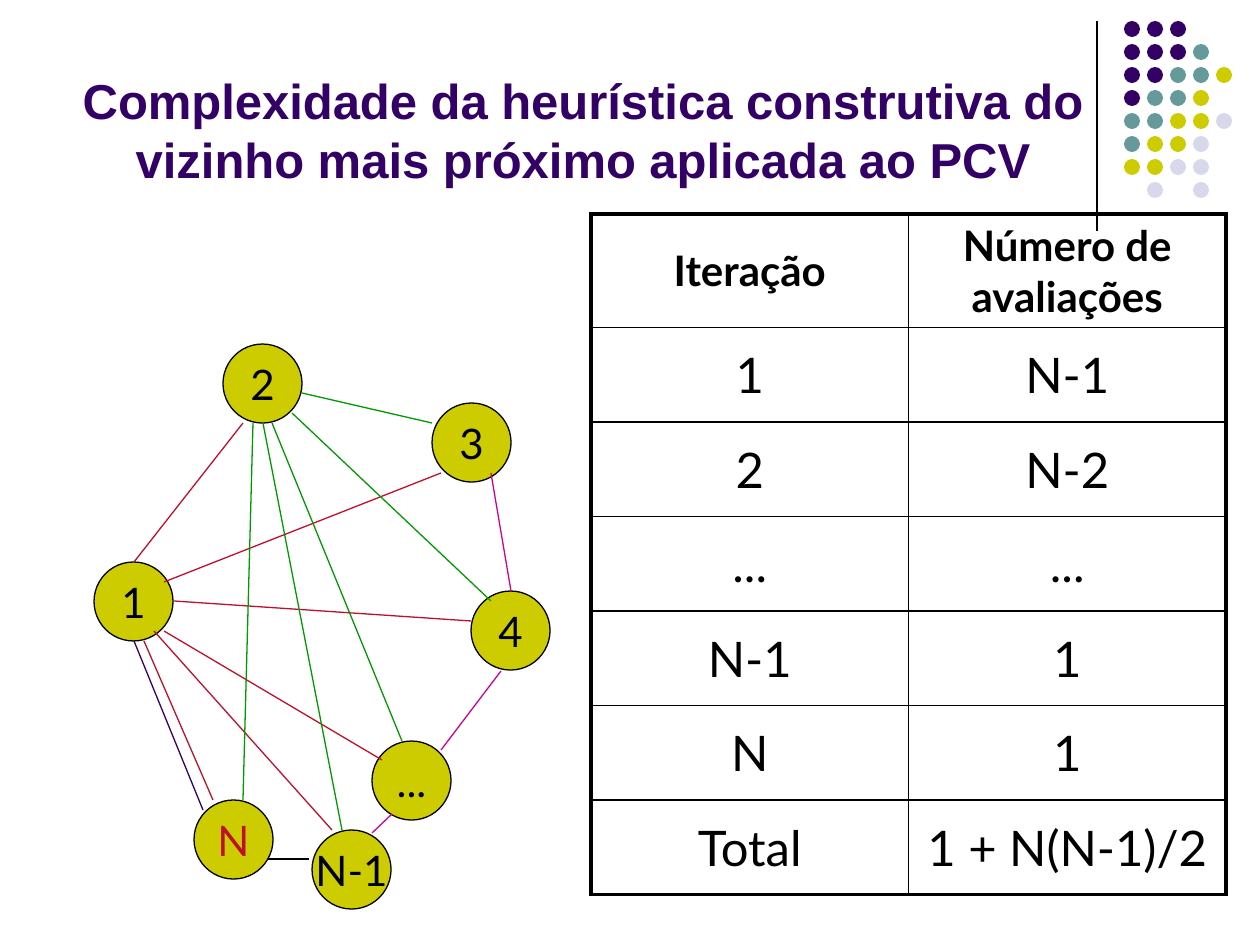
from lxml import etree
from pptx import Presentation
from pptx import util as u
from pptx.dml.color import RGBColor
from pptx.enum import shapes, text
from pptx.oxml.ns import qn

PX = 914400 / 126
BLACK, PURPLE, TEAL, LIME, PALE = "000000", "330066", "669999", "CCCC00", "D8D8EC"
RED, GREEN, PINK = "BC102D", "009900", "CC0099"

TITLE = "Complexidade da heurística construtiva do vizinho mais próximo aplicada ao PCV"

# Corner dots: one string per row, one letter per colour
DOTS = ["PPP", "PPPT", "PPTTL", "PTTL", "TTLLA", "TLLA", "LLAA", " A A"]
DOT_COLORS = {"P": PURPLE, "T": TEAL, "L": LIME, "A": PALE}
DOT_LEFT, DOT_TOP, DOT_PITCH, DOT_SIZE = 1124, 21, 23, 16

# Graph nodes: label, left, top, text colour
NODE_SIZE = 79
NODES = [
    ("1", 94, 562, BLACK), ("2", 223, 344, BLACK), ("3", 432, 403, BLACK),
    ("4", 471, 591, BLACK), ("...", 372, 741, BLACK), ("N", 194, 800, RED),
    ("N-1", 312, 830, BLACK),
]

# Graph edges by colour: x1, y1, x2, y2
EDGES = {
    RED: [(164, 582, 441, 473), (174, 601, 471, 621), (164, 631, 382, 760),
          (144, 641, 213, 800), (134, 562, 243, 423), (332, 830, 154, 631)],
    GREEN: [(302, 393, 432, 423), (292, 413, 491, 601), (272, 423, 402, 741),
            (253, 423, 243, 800), (342, 830, 263, 423)],
    PURPLE: [(203, 810, 134, 641)],
    PINK: [(491, 473, 511, 591), (501, 671, 441, 750), (392, 814, 372, 833)],
    BLACK: [(309, 859, 268, 859)],
}

TABLE = [
    ("Iteração", "Número de avaliações"),
    ("1", "N-1"),
    ("2", "N-2"),
    ("...", "..."),
    ("N-1", "1"),
    ("N", "1"),
    ("Total", "1 + N(N-1)/2"),
]
TABLE_BOX = (591, 214, 635, 680)
HEADER_HEIGHT = 113


def px(*lengths):
    return [u.Emu(round(length * PX)) for length in lengths]


def color(value):
    return RGBColor.from_string(value)


def write(frame, words, size=24, font="Lato", ink=BLACK, bold=False, before=0):
    para = frame.paragraphs[0]
    para.alignment = text.PP_ALIGN.CENTER
    para.space_before = u.Pt(before)
    span = para.add_run()
    span.text = words
    span.font.size, span.font.name, span.font.bold = u.Pt(size), font, bold
    span.font.color.rgb = color(ink)


def add_circle(page, left, top, size, fill, outline=None):
    circle = page.shapes.add_shape(
        shapes.MSO_SHAPE.OVAL, *px(left, top, size, size))
    circle.shadow.inherit = False
    circle.fill.solid()
    circle.fill.fore_color.rgb = color(fill)
    if outline:
        circle.line.color.rgb = color(outline)
        circle.line.width = u.Pt(0.75)
    else:
        circle.line.fill.background()
    return circle


def add_line(page, ends, ink):
    line = page.shapes.add_connector(shapes.MSO_CONNECTOR.STRAIGHT, *px(*ends))
    line.line.color.rgb = color(ink)
    line.line.width = u.Pt(0.75)
    etree.SubElement(line._element.spPr, qn("a:effectLst"))


def add_borders(cell, widths):
    props = cell._tc.get_or_add_tcPr()
    for side, width in zip("LRTB", widths):
        border = etree.SubElement(props, qn(f"a:ln{side}"), w=str(u.Pt(width)))
        fill = etree.SubElement(border, qn("a:solidFill"))
        etree.SubElement(fill, qn("a:srgbClr"), val=BLACK)


def add_table(page):
    last_row, last_col = len(TABLE) - 1, len(TABLE[0]) - 1
    grid = page.shapes.add_table(
        last_row + 1, last_col + 1, *px(*TABLE_BOX)).table
    grid.first_row = grid.horz_banding = False
    for column in grid.columns:
        column.width = px(TABLE_BOX[2] / (last_col + 1))[0]
    body_height = (TABLE_BOX[3] - HEADER_HEIGHT) / last_row
    for r, row in enumerate(TABLE):
        header = r == 0
        size = 24 if header else 28
        grid.rows[r].height = px(HEADER_HEIGHT if header else body_height)[0]
        for c, words in enumerate(row):
            cell = grid.cell(r, c)
            cell.vertical_anchor = text.MSO_ANCHOR.MIDDLE
            outer = (c == 0, c == last_col, header, r == last_row)
            add_borders(cell, [2.25 if edge else 1 for edge in outer])
            cell.fill.background()
            write(cell.text_frame, words, size=size, bold=header,
                  before=round(size * 0.2, 1))


def main():
    deck = Presentation()
    deck.slide_width, deck.slide_height = px(1260, 945)
    page = deck.slides.add_slide(deck.slide_layouts[5])

    # Corner decoration
    add_line(page, (1097, 21, 1097, 231), BLACK)
    for r, row in enumerate(DOTS):
        for c, letter in enumerate(row):
            if letter in DOT_COLORS:
                add_circle(page, DOT_LEFT + c * DOT_PITCH,
                           DOT_TOP + r * DOT_PITCH, DOT_SIZE, DOT_COLORS[letter])

    # Title
    title = page.shapes.title
    title.left, title.top, title.width, title.height = px(63, 16, 1040, 179)
    title.text_frame.vertical_anchor = text.MSO_ANCHOR.BOTTOM
    title.text_frame.auto_size = text.MSO_AUTO_SIZE.NONE
    write(title.text_frame, TITLE, size=28, font="Arial", ink=PURPLE, bold=True)

    # Graph nodes
    for label, left, top, ink in NODES:
        node = add_circle(page, left, top, NODE_SIZE, LIME, outline=BLACK)
        node.text_frame.word_wrap = False
        node.text_frame.vertical_anchor = text.MSO_ANCHOR.MIDDLE
        write(node.text_frame, label, ink=ink)

    add_table(page)

    # Graph edges
    for ink, edges in EDGES.items():
        for ends in edges:
            add_line(page, ends, ink)

    deck.save("out.pptx")


if __name__ == "__main__":
    main()
